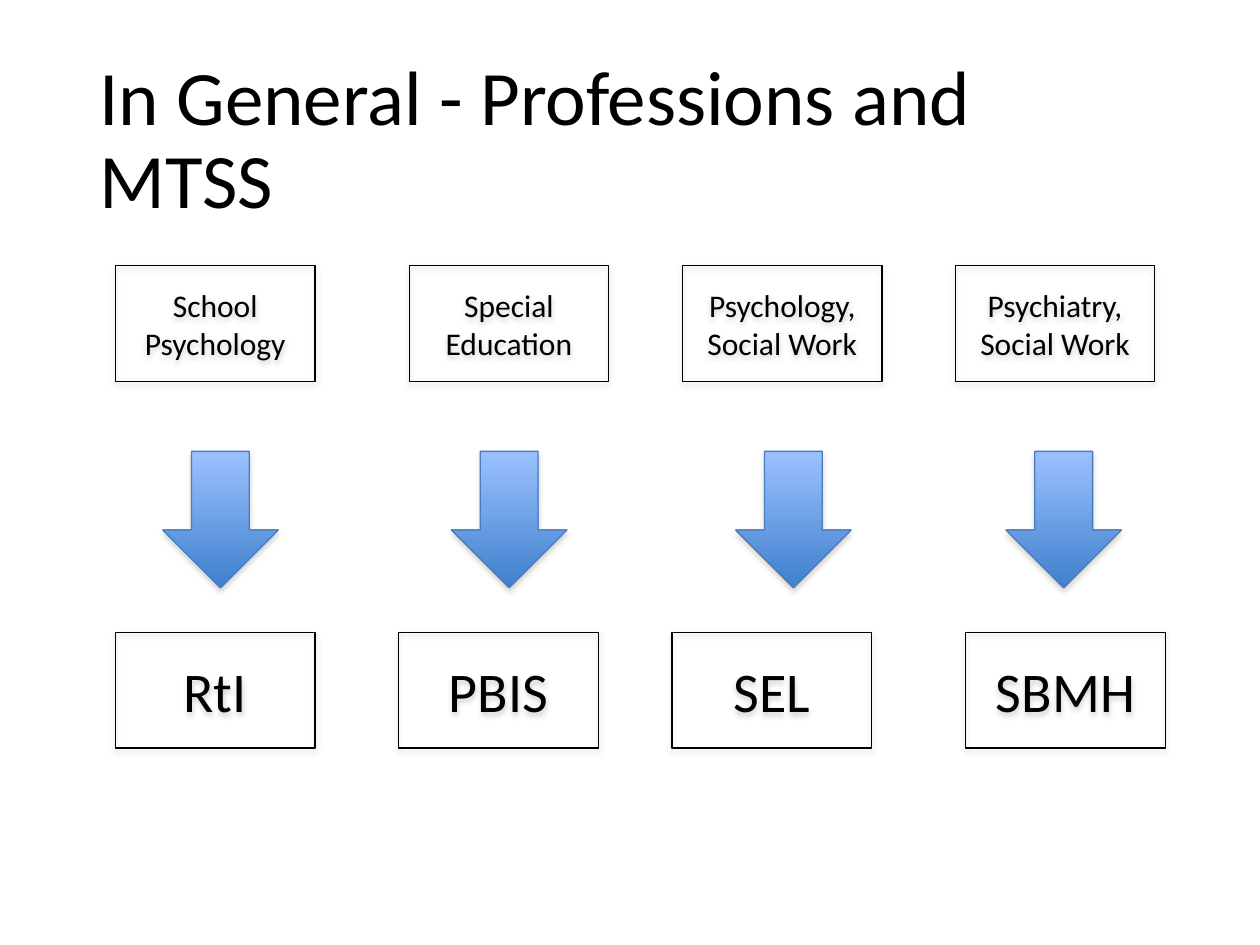
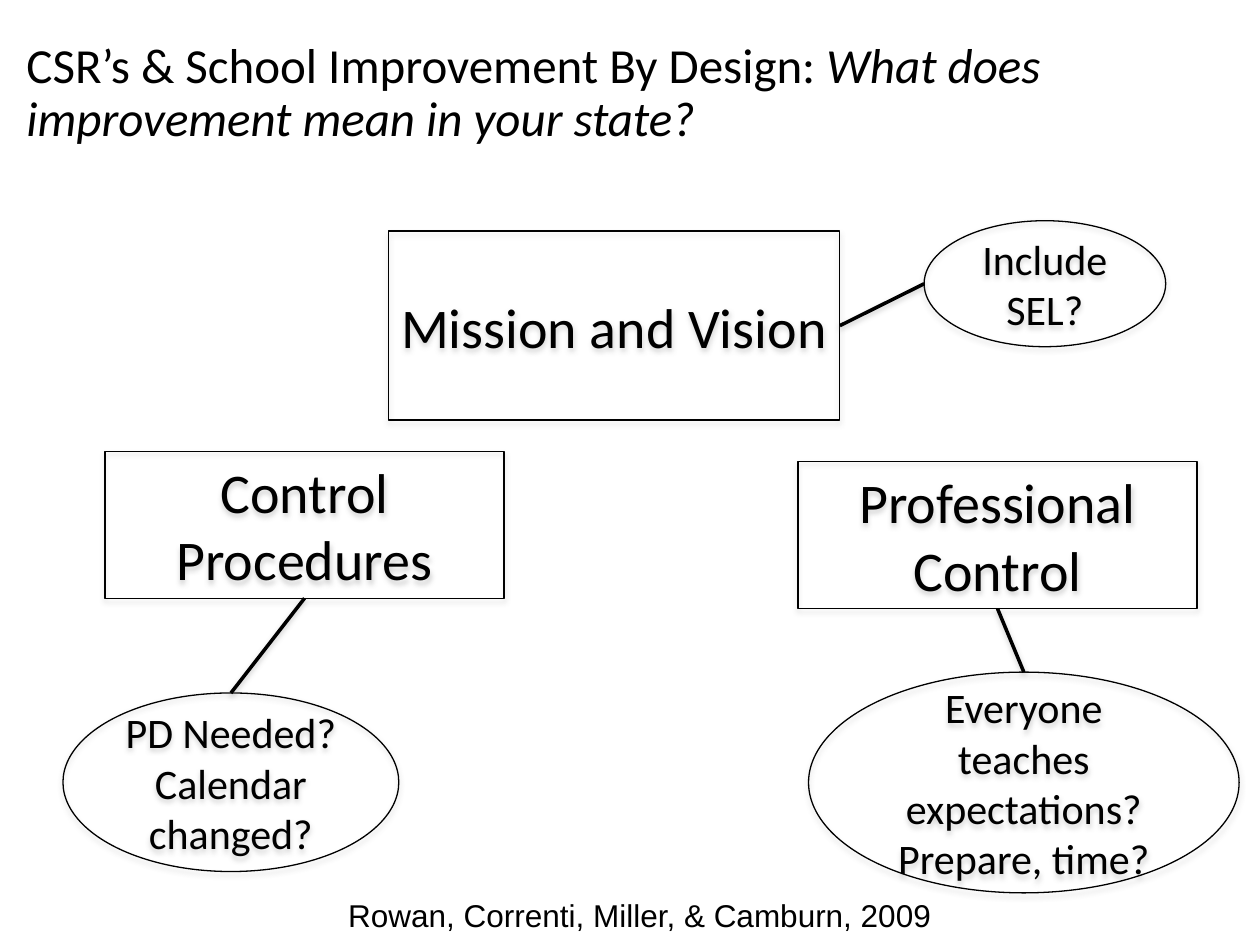
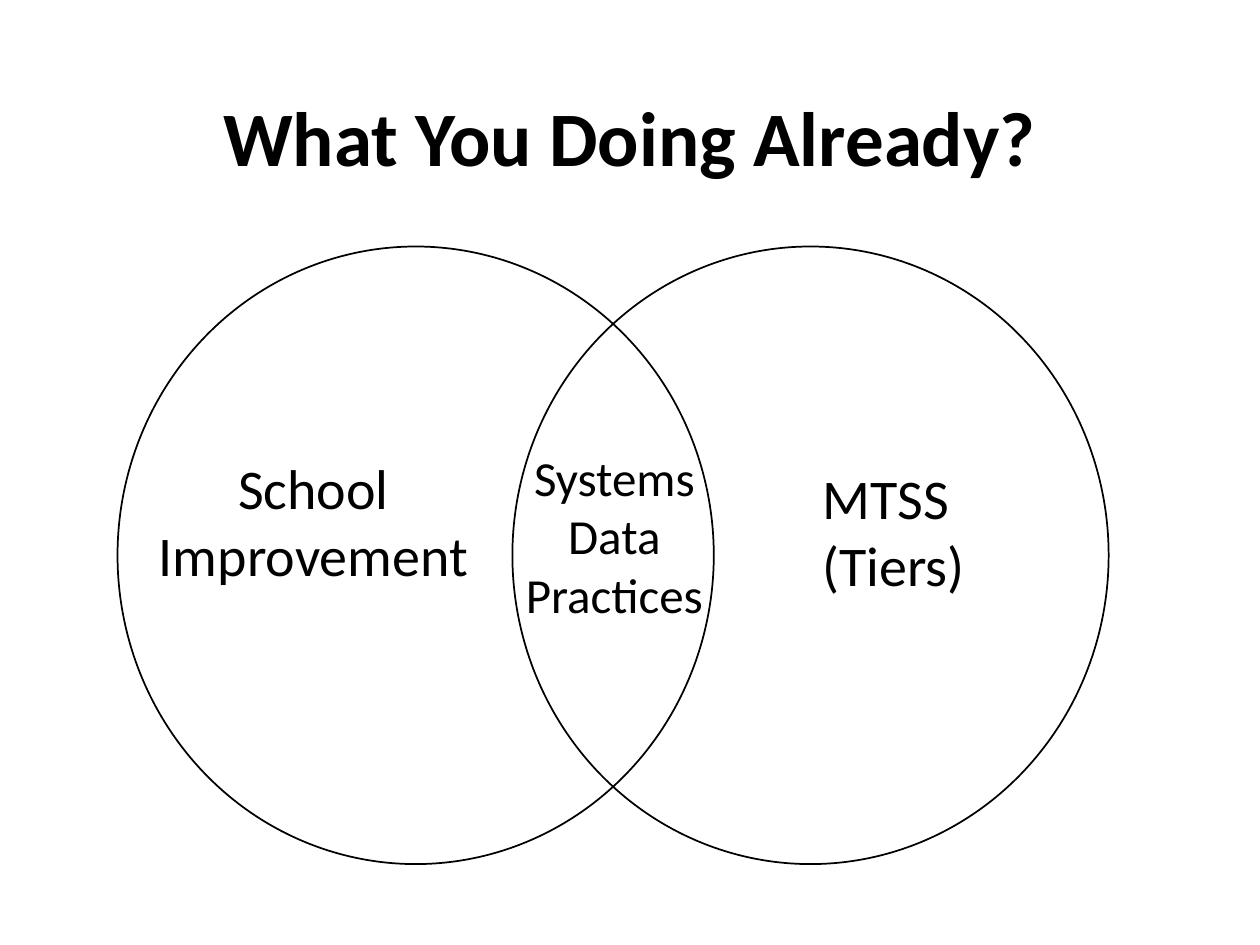
from dataclasses import dataclass

from lxml import etree
from pptx import Presentation
from pptx.dml.color import RGBColor
from pptx.enum.shapes import MSO_CONNECTOR, MSO_SHAPE
from pptx.enum.text import MSO_ANCHOR, MSO_AUTO_SIZE, PP_ALIGN
from pptx.oxml.ns import qn
from pptx.util import Cm, Pt

RECT = MSO_SHAPE.RECTANGLE
OVAL = MSO_SHAPE.OVAL
ARROW = MSO_SHAPE.DOWN_ARROW
LINE = MSO_CONNECTOR.STRAIGHT
MIDDLE = MSO_ANCHOR.MIDDLE
GROW = MSO_AUTO_SIZE.SHAPE_TO_FIT_TEXT
LEFT, CENTER = PP_ALIGN.LEFT, PP_ALIGN.CENTER
BOTTOM, RIGHT = 2, 3


@dataclass(frozen=True)
class Theme:
    """Colours, fonts, type sizes and line widths of the deck."""
    ink: RGBColor = RGBColor(0, 0, 0)
    light: RGBColor = RGBColor(0x9B, 0xC1, 0xFF)
    deep: RGBColor = RGBColor(0x3F, 0x80, 0xCD)
    edge: RGBColor = RGBColor(0x4A, 0x7E, 0xBB)
    shade: str = "808080"
    font: str = "Calibri"
    cite: str = "Arial"
    head: int = 44
    large: int = 32
    medium: int = 28
    note: int = 24
    small: int = 18
    thin: float = 0.75
    ring: float = 1
    thick: float = 2


class Deck:
    """Builds slides in one style."""

    def __init__(self, theme):
        self.theme = theme
        self.file = Presentation()
        self.file.slide_width, self.file.slide_height = Cm(25.4), Cm(19.05)
        self.slide = None

    def style(self, frame, size, align=LEFT, font=None, bold=None):
        for para in frame.paragraphs:
            para.alignment = align
            para.font.name = font or self.theme.font
            para.font.size = Pt(size)
            para.font.color.rgb = self.theme.ink
            para.font.bold = bold

    def shade(self, effects, dist, alpha):
        glow = etree.SubElement(
            effects, qn("a:outerShdw"), blurRad=str(Pt(3.15)), dist=str(Pt(dist)),
            dir="5400000", rotWithShape="0")
        color = etree.SubElement(glow, qn("a:srgbClr"), val=self.theme.shade)
        etree.SubElement(color, qn("a:alpha"), val=str(alpha * 1000))

    def page(self, parts, size, at=(1.75, 1.02), align=LEFT, bold=None):
        self.slide = self.file.slides.add_slide(self.file.slide_layouts[5])
        title = self.slide.shapes.title
        title.left, title.top = map(Cm, at)
        title.width, title.height = Cm(21.9), Cm(3.68)
        frame = title.text_frame
        frame.vertical_anchor = MIDDLE
        para = frame.paragraphs[0]
        para.line_spacing = 0.9
        for text, slant in parts:
            run = para.add_run()
            run.text = text
            if slant:
                run.font.italic = True
        self.style(frame, size, align, bold=bold)

    def shape(self, kind, at, width=None, shade=True):
        item = self.slide.shapes.add_shape(kind, *map(Cm, at))
        item.shadow.inherit = False
        item.fill.background()
        item.line.color.rgb = self.theme.ink
        item.line.width = Pt(width or self.theme.thin)
        if shade:
            self.shade(item._element.spPr.find(qn("a:effectLst")), 1.8, 35)
        return item

    def box(self, kind, at, text, size):
        item = self.shape(kind, at)
        item.text_frame.text = text
        self.style(item.text_frame, size, CENTER)
        return item

    def arrow(self, at):
        item = self.shape(ARROW, at)
        item.line.color.rgb = self.theme.edge
        item.fill.gradient()
        item.fill.gradient_angle = 270
        for stop, color in zip(item.fill.gradient_stops, (self.theme.light, self.theme.deep)):
            stop.color.rgb = color

    def link(self, box, side, end):
        item = self.slide.shapes.add_connector(LINE, 0, 0, *end)
        item.begin_connect(box, side)
        item.line.color.rgb = self.theme.ink
        item.line.width = Pt(self.theme.thick)
        self.shade(etree.SubElement(item._element.spPr, qn("a:effectLst")), 1.6, 38)

    def text(self, at, text, size, align=LEFT, font=None):
        frame = self.slide.shapes.add_textbox(*map(Cm, at)).text_frame
        frame.text = text
        frame.word_wrap = False
        frame.auto_size = GROW
        self.style(frame, size, align, font)


def fields(deck):
    """Professions pointing down to their frameworks."""
    theme = deck.theme
    deck.page([("In General - Professions and MTSS", False)], theme.head)
    columns = [
        ("School Psychology", 2.33, 3.28, "RtI", 2.33),
        ("Special Education", 8.25, 9.1, "PBIS", 8.04),
        ("Psychology, Social Work", 13.76, 14.83, "SEL", 13.55),
        ("Psychiatry, Social Work", 19.26, 20.28, "SBMH", 19.47),
    ]
    for field, top, mid, model, low in columns:
        deck.box(RECT, (top, 5.36, 4.02, 2.33), field, theme.small)
        deck.arrow((mid, 9.1, 2.33, 2.75))
        deck.box(RECT, (low, 12.75, 4.02, 2.33), model, theme.large)


def design(deck):
    """Parts of school improvement with a question on each."""
    theme = deck.theme
    deck.page([("CSR’s & School Improvement By Design:", False),
               (" What does improvement mean in your state?", True)],
              theme.medium, (0.28, 0.05))
    pairs = [
        ("Mission and Vision", (7.83, 4.66, 9.1, 3.81), RIGHT,
         "Include SEL?", (18.63, 4.45, 4.87, 2.54)),
        ("Control Procedures", (2.12, 9.1, 8.04, 2.96), BOTTOM,
         "PD Needed? Calendar changed?", (1.27, 13.97, 6.77, 3.6)),
        ("Professional Control", (16.09, 9.31, 8.04, 2.96), BOTTOM,
         "Everyone teaches expectations? Prepare, time?", (16.3, 13.55, 8.68, 4.45)),
    ]
    for part, place, side, query, spot in pairs:
        box = deck.box(RECT, place, part, theme.large)
        oval = deck.box(OVAL, spot, query, theme.note)
        if side == RIGHT:
            end = oval.left, oval.top + oval.height // 2
        else:
            end = oval.left + oval.width // 2, oval.top
        deck.link(box, side, end)
    deck.text((6.77, 17.93, 12.37, 1.02), "Rowan, Correnti, Miller, & Camburn, 2009",
              theme.small, font=theme.cite)


def overlap(deck):
    """Two rings that share systems, data and practices."""
    theme = deck.theme
    deck.page([("What You Doing Already?", False)], theme.head, align=CENTER, bold=True)
    for left in (2.37, 10.33):
        deck.shape(OVAL, (left, 4.97, 12.02, 12.45), theme.ring, shade=False)
    deck.text((2.92, 9.02, 7.06, 3), "School \nImprovement ", theme.large, CENTER)
    deck.text((16.33, 9.22, 3.4, 3), "MTSS\n(Tiers)", theme.large)
    deck.text((10.33, 8.89, 4.11, 3.84), "Systems\nData\nPractices", theme.medium, CENTER)


def main():
    """Build and save the deck."""
    deck = Deck(Theme())
    for build in (fields, design, overlap):
        build(deck)
    deck.file.save("out.pptx")


if __name__ == "__main__":
    main()
